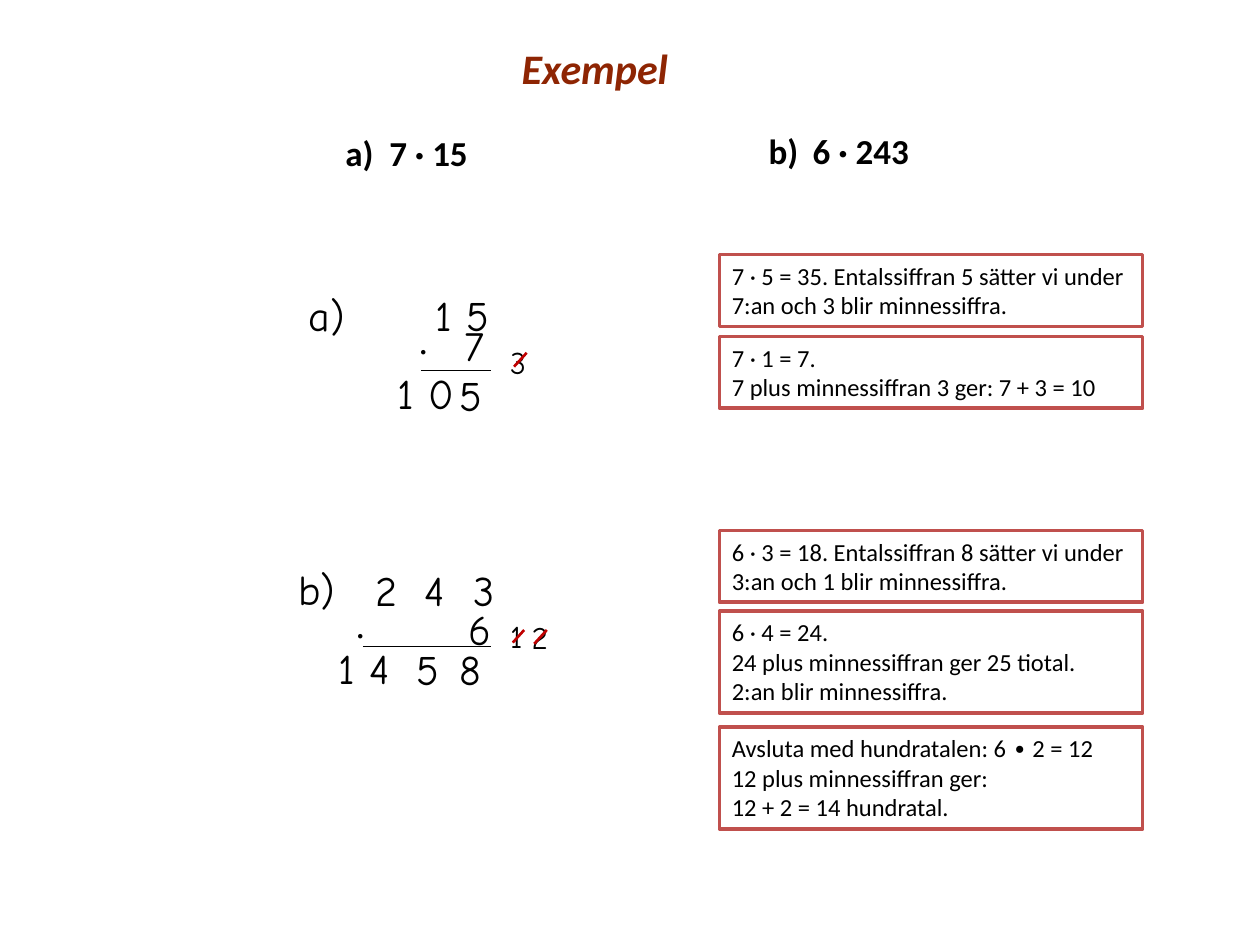
from lxml.etree import SubElement
from pptx import Presentation
from pptx.dml.color import RGBColor
from pptx.enum.shapes import MSO_CONNECTOR, MSO_SHAPE
from pptx.enum.text import MSO_ANCHOR, PP_ALIGN
from pptx.oxml.ns import qn
from pptx.util import Inches, Pt

BLACK = RGBColor(0x00, 0x00, 0x00)
WHITE = RGBColor(0xFF, 0xFF, 0xFF)
BROWN = RGBColor(0x8E, 0x25, 0x03)
BORDER = RGBColor(0xC0, 0x50, 0x4D)
STRIKE = RGBColor(0xC0, 0x00, 0x00)
PRINT, HAND = "Calibri", "Comic Neue"

TITLE = "Exempel"
# text, left, top, width
HEADINGS = [("a)\t7 · 15", 2.69, 1.06, 1.58), ("b)\t6 · 243", 6.05, 1.04, 2.16)]
HEADING_HEIGHT, HEADING_TAB = 0.33, 0.35

# Digits: text, left, top, width, tab stops
DIGITS = [
    ("a)", 2.35, 2.25, 0.54, []),
    ("1 5", 3.36, 2.25, 1.14, []),
    ("1 0", 3.06, 2.87, 0.77, []),
    ("5", 3.55, 2.88, 0.29, []),
    ("b)", 2.27, 4.42, 0.54, []),
    ("2\t4\t3", 2.88, 4.43, 1.64, [0.39, 0.78]),
    ("1 4", 2.59, 5.05, 0.77, []),
    ("5", 3.21, 5.06, 0.44, []),
    ("8", 3.55, 5.06, 0.29, []),
]
# Multipliers: digit, left, top, width, tab stop
MULTIPLIERS = [("7", 3.23, 2.49, 1.47, 0.36), ("6", 2.73, 4.74, 1.47, 0.89)]
# Carried digits: text, left, top
CARRIES = [("3", 3.95, 2.67), ("1", 3.95, 4.85), ("2", 4.12, 4.86)]
# Lines: start x, start y, end x, end y
SUM_LINES = [(3.34, 2.94, 3.9, 2.94), (2.88, 5.13, 3.9, 5.13)]
STRIKES = [(4.08, 2.91, 4.18, 2.8), (4.07, 5.1, 4.16, 5), (4.24, 5.11, 4.34, 5)]

NOTE_LEFT, NOTE_WIDTH = 5.71, 3.36
# Notes: top, height, paragraphs
NOTES = [
    (2.02, 0.57, ["7 · 5 = 35. Entalssiffran 5 sätter vi under 7:an och 3 blir minnessiffra."]),
    (2.67, 0.57, ["7 · 1 = 7.", "7 plus minnessiffran 3 ger: 7 + 3 = 10"]),
    (4.21, 0.57, ["6 · 3 = 18. Entalssiffran 8 sätter vi under 3:an och 1 blir minnessiffra."]),
    (4.85, 0.81, ["6 · 4 = 24.", "24 plus minnessiffran ger 25 tiotal.",
                  "2:an blir minnessiffra."]),
    (5.77, 0.81, ["Avsluta med hundratalen: 6 ∙ 2 = 12", "12 plus minnessiffran ger:",
                  "12 + 2 = 14 hundratal."]),
]


def inches(*values):
    return [Inches(value) for value in values]


def add_run(paragraph, text, size, font=PRINT, color=BLACK, bold=False, italic=False):
    run = paragraph.add_run()
    run.text = text
    run.font.size, run.font.name = Pt(size), font
    run.font.bold, run.font.italic = bold, italic
    run.font.color.rgb = color


def set_tabs(paragraph, stops):
    if stops:
        tab_list = SubElement(paragraph._p.get_or_add_pPr(), qn("a:tabLst"))
        for stop in stops:
            SubElement(tab_list, qn("a:tab"), pos=str(Inches(stop)), algn="l")


def add_text(slide, box, runs, stops=()):
    """Add a one-line text box; each run is (text, size, font)."""
    frame = slide.shapes.add_textbox(*inches(*box)).text_frame
    frame.word_wrap = True
    paragraph = frame.paragraphs[0]
    set_tabs(paragraph, stops)
    for run in runs:
        add_run(paragraph, *run)


def add_line(slide, ends, color, width):
    line = slide.shapes.add_connector(MSO_CONNECTOR.STRAIGHT, *inches(*ends))
    line.line.color.rgb, line.line.width = color, Pt(width)
    SubElement(line._element.spPr, qn("a:effectLst"))


def add_title(slide):
    title = slide.shapes.title
    title.left, title.top, title.width, title.height = inches(4.04, 0.29, 1.37, 0.5)
    title.text_frame.word_wrap = False
    paragraph = title.text_frame.paragraphs[0]
    paragraph.alignment = PP_ALIGN.LEFT
    add_run(paragraph, TITLE, 24, color=BROWN, bold=True, italic=True)


def add_heading(slide, text, left, top, width):
    table = slide.shapes.add_table(1, 1, *inches(left, top, width, HEADING_HEIGHT)).table
    table.first_row = table.horz_banding = False
    cell = table.cell(0, 0)
    cell.fill.background()
    cell.margin_left = cell.margin_right = Inches(0.05)
    cell.margin_top = cell.margin_bottom = 0
    paragraph = cell.text_frame.paragraphs[0]
    set_tabs(paragraph, [HEADING_TAB])
    add_run(paragraph, text, 20, bold=True)


def add_note(slide, top, height, lines):
    note = slide.shapes.add_shape(
        MSO_SHAPE.RECTANGLE, *inches(NOTE_LEFT, top, NOTE_WIDTH, height))
    note.shadow.inherit = False
    note.fill.solid()
    note.fill.fore_color.rgb = WHITE
    note.line.color.rgb, note.line.width = BORDER, Pt(2)
    frame = note.text_frame
    frame.word_wrap = True
    frame.vertical_anchor = MSO_ANCHOR.TOP
    for index, line in enumerate(lines):
        paragraph = frame.add_paragraph() if index else frame.paragraphs[0]
        paragraph.alignment = PP_ALIGN.LEFT
        add_run(paragraph, line, 14)


def main():
    presentation = Presentation()
    presentation.slide_width, presentation.slide_height = inches(10, 7.5)
    slide = presentation.slides.add_slide(presentation.slide_layouts[5])
    add_title(slide)
    for heading in HEADINGS:
        add_heading(slide, *heading)
    for note in NOTES:
        add_note(slide, *note)
    for text, left, top, width, stops in DIGITS:
        add_text(slide, (left, top, width, 0.5), [(text, 24, HAND)], stops)
    for digit, left, top, width, stop in MULTIPLIERS:
        runs = [("·", 18, PRINT), ("\t", 24, PRINT), (digit, 24, HAND)]
        add_text(slide, (left, top, width, 0.5), runs, [stop])
    for text, left, top in CARRIES:
        add_text(slide, (left, top, 0.59, 0.4), [(text, 18, HAND)])
    for ends in SUM_LINES:
        add_line(slide, ends, BLACK, 1)
    for ends in STRIKES:
        add_line(slide, ends, STRIKE, 1.5)
    presentation.save("out.pptx")


if __name__ == "__main__":
    main()
